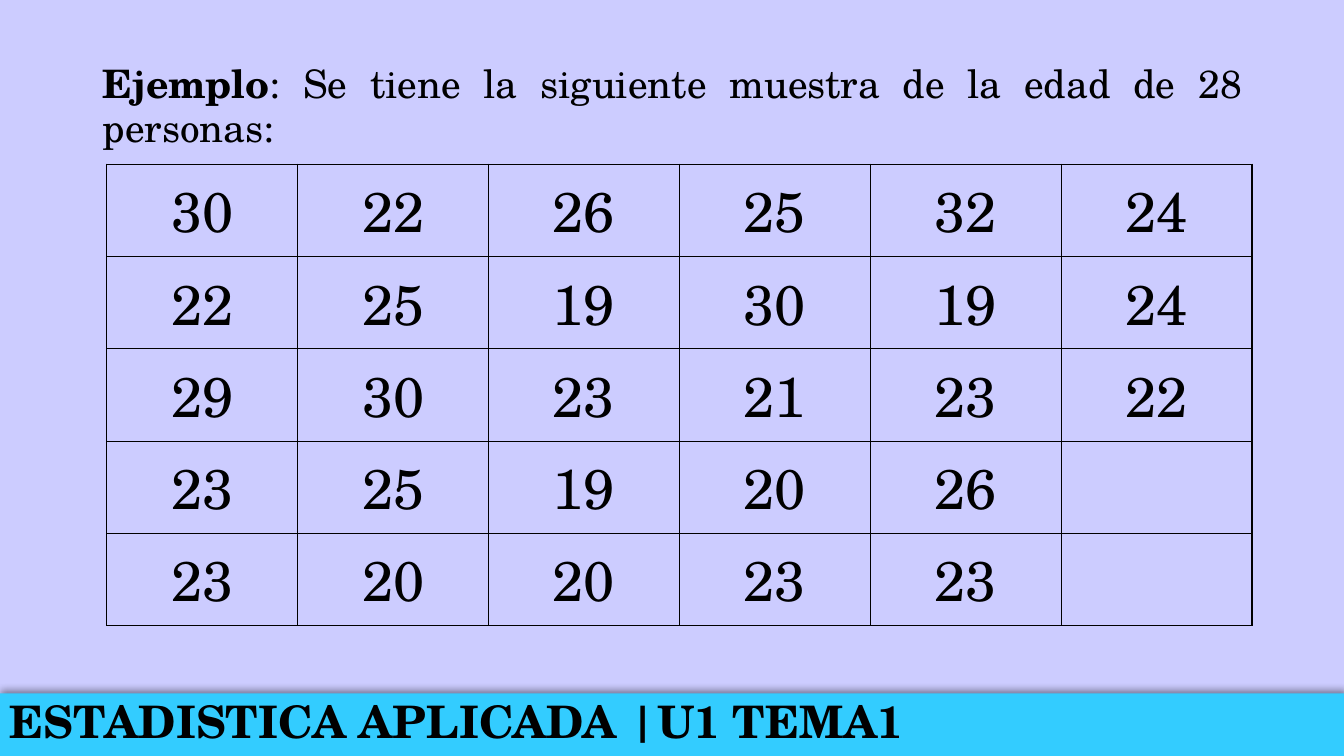
from dataclasses import dataclass

from lxml import etree
from pptx import Presentation
from pptx.dml.color import RGBColor
from pptx.enum.shapes import MSO_SHAPE
from pptx.enum.text import MSO_ANCHOR, MSO_AUTO_SIZE, PP_ALIGN
from pptx.oxml import parse_xml
from pptx.oxml.ns import nsdecls
from pptx.slide import Slide
from pptx.table import _Cell
from pptx.text.text import _Paragraph
from pptx.util import Emu, Inches, Pt

RECT = MSO_SHAPE.RECTANGLE
TOP, MIDDLE = MSO_ANCHOR.TOP, MSO_ANCHOR.MIDDLE
FIXED = MSO_AUTO_SIZE.NONE
LEFT, CENTER, JUSTIFY = PP_ALIGN.LEFT, PP_ALIGN.CENTER, PP_ALIGN.JUSTIFY
WIDE, HIGH = Inches(13.33), Inches(7.5)
TITLE_ONLY = 5


@dataclass(frozen=True)
class Theme:
    face: str = "TeX Gyre Schola"
    ink: str = "000000"
    back: str = "CCCCFF"
    band: str = "33CCFF"
    lead: int = 28
    foot: int = 32
    cell: int = 40
    rule: int = 1


@dataclass(frozen=True)
class Box:
    """A frame in percent of the slide's width and height."""
    x: float
    y: float
    w: float
    h: float

    def frame(self) -> tuple[Emu, Emu, Emu, Emu]:
        return (Emu(round(WIDE * self.x / 100)), Emu(round(HIGH * self.y / 100)),
                Emu(round(WIDE * self.w / 100)), Emu(round(HIGH * self.h / 100)))


THEME = Theme()
LEAD = Box(6.9, 7.6, 86.27, 82.53)
GRID = Box(7.95, 21.73, 85.22, 56)
BAND = Box(0, 91.73, 100, 8.27)
FOOT = Box(0, 91.73, 100, 8)

AGES = (
    (30, 22, 26, 25, 32, 24),
    (22, 25, 19, 30, 19, 24),
    (29, 30, 23, 21, 23, 22),
    (23, 25, 19, 20, 26, ""),
    (23, 20, 20, 23, 23, ""),
)


def style(para: _Paragraph, size: int, align: PP_ALIGN, bold: bool | None = None) -> None:
    font = para.font
    font.name, font.size, font.bold = THEME.face, Pt(size), bold
    font.color.rgb = RGBColor.from_string(THEME.ink)
    para.alignment = align


def add_lead(slide: Slide) -> None:
    title = slide.shapes.title
    title.left, title.top, title.width, title.height = LEAD.frame()
    text = title.text_frame
    text.word_wrap, text.auto_size, text.vertical_anchor = True, FIXED, TOP
    para = text.paragraphs[0]
    style(para, THEME.lead, JUSTIFY)
    para.line_spacing = Pt(31.4)
    for words, bold in (
        ("Ejemplo", True),
        (": Se tiene la siguiente muestra de la edad de 28 personas:", False),
    ):
        run = para.add_run()
        run.text, run.font.bold = words, bold


def add_band(slide: Slide) -> None:
    band = slide.shapes.add_shape(RECT, *BAND.frame())
    band.fill.solid()
    band.fill.fore_color.rgb = RGBColor.from_string(THEME.band)
    band.line.fill.background()
    band.shadow.inherit = False
    effects = band._element.spPr.find("{*}effectLst")
    effects.append(parse_xml(
        f'<a:outerShdw {nsdecls("a")} blurRad="{Pt(4)}" dist="{Pt(3)}" dir="16200000" '
        f'rotWithShape="0"><a:srgbClr val="{THEME.ink}"><a:alpha val="40000"/>'
        '</a:srgbClr></a:outerShdw>'))


def add_foot(slide: Slide) -> None:
    text = slide.shapes.add_textbox(*FOOT.frame()).text_frame
    text.word_wrap, text.auto_size, text.vertical_anchor = True, FIXED, MIDDLE
    para = text.paragraphs[0]
    para.text = "ESTADISTICA APLICADA |U1 TEMA1"
    para.line_spacing = 0.9
    style(para, THEME.foot, LEFT, True)


def rule_cell(cell: _Cell) -> None:
    """Draw all four borders; they must come before the cell's fill."""
    props = cell._tc.get_or_add_tcPr()
    for spot, side in enumerate(("lnL", "lnR", "lnT", "lnB")):
        line: etree._Element = parse_xml(
            f'<a:{side} {nsdecls("a")} w="{Pt(THEME.rule)}"><a:solidFill>'
            f'<a:srgbClr val="{THEME.ink}"/></a:solidFill></a:{side}>')
        props.insert(spot, line)


def add_ages(slide: Slide) -> None:
    table = slide.shapes.add_table(len(AGES), len(AGES[0]), *GRID.frame()).table
    table.first_row = table.horz_banding = False
    for r, row in enumerate(AGES):
        for c, age in enumerate(row):
            cell = table.cell(r, c)
            cell.text = str(age)
            style(cell.text_frame.paragraphs[0], THEME.cell, CENTER)
            cell.fill.background()
            rule_cell(cell)


def main() -> None:
    deck = Presentation()
    deck.slide_width, deck.slide_height = WIDE, HIGH
    slide = deck.slides.add_slide(deck.slide_layouts[TITLE_ONLY])
    fill = slide.background.fill
    fill.solid()
    fill.fore_color.rgb = RGBColor.from_string(THEME.back)
    add_lead(slide)
    add_band(slide)
    add_foot(slide)
    add_ages(slide)
    deck.save("out.pptx")


if __name__ == "__main__":
    main()
